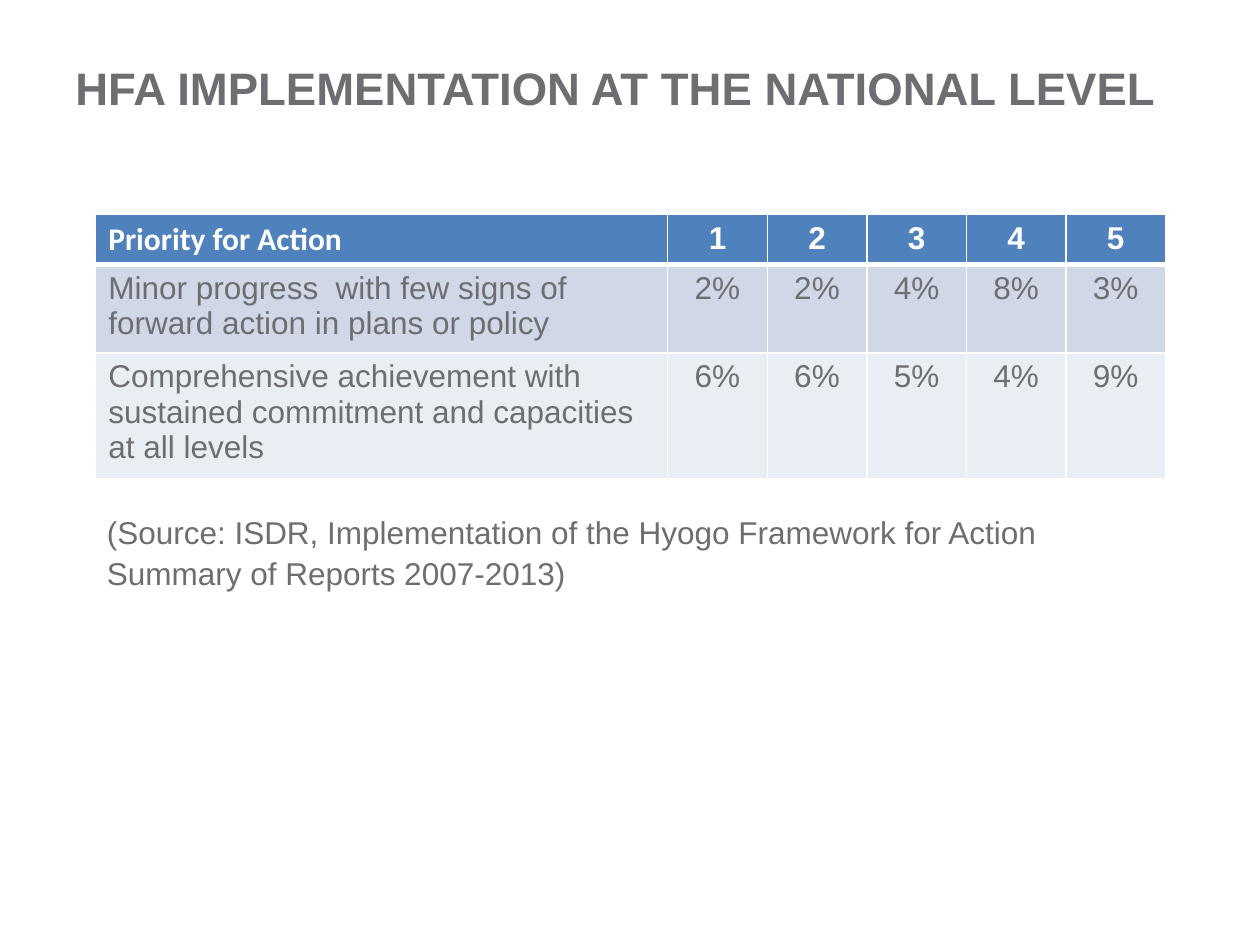
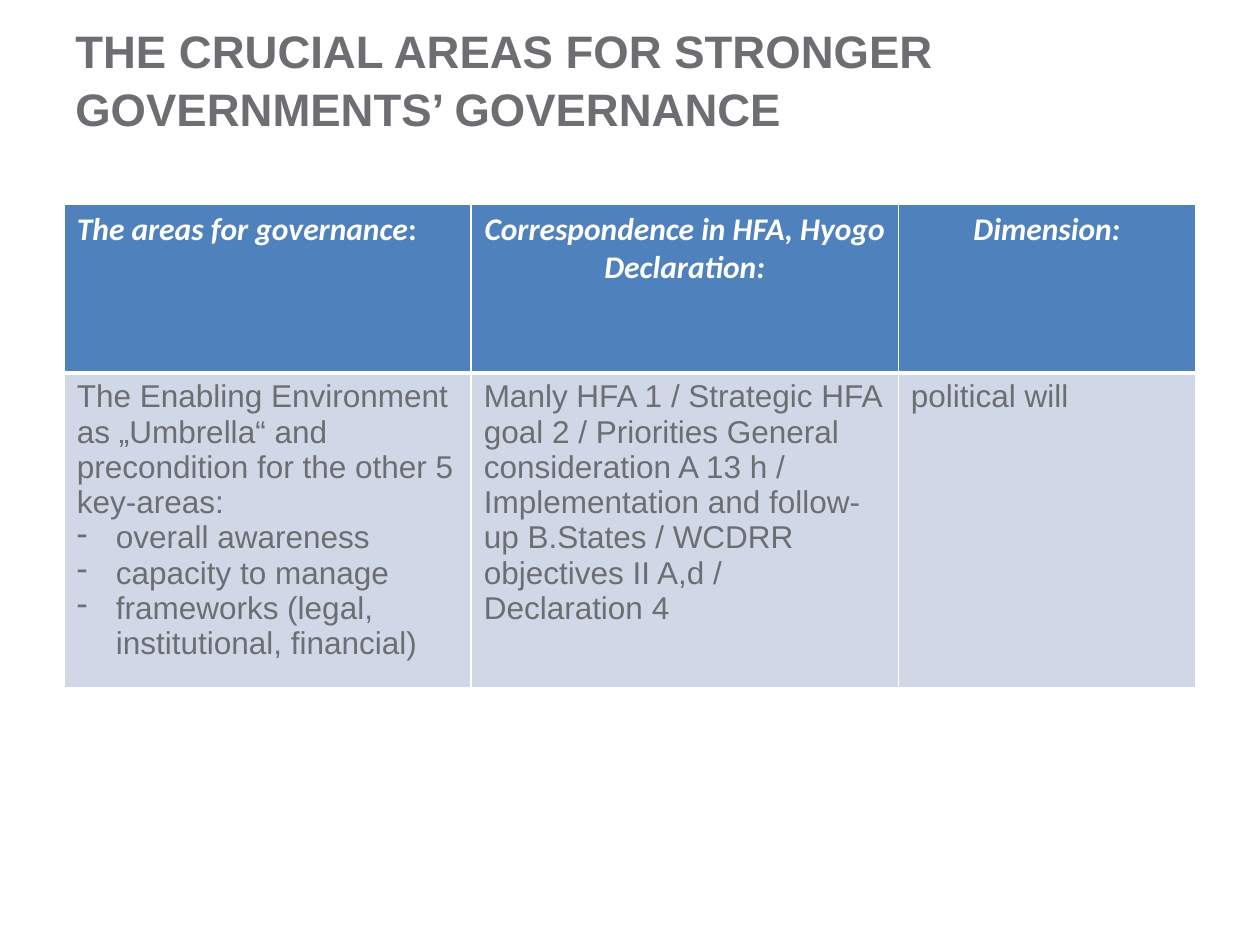
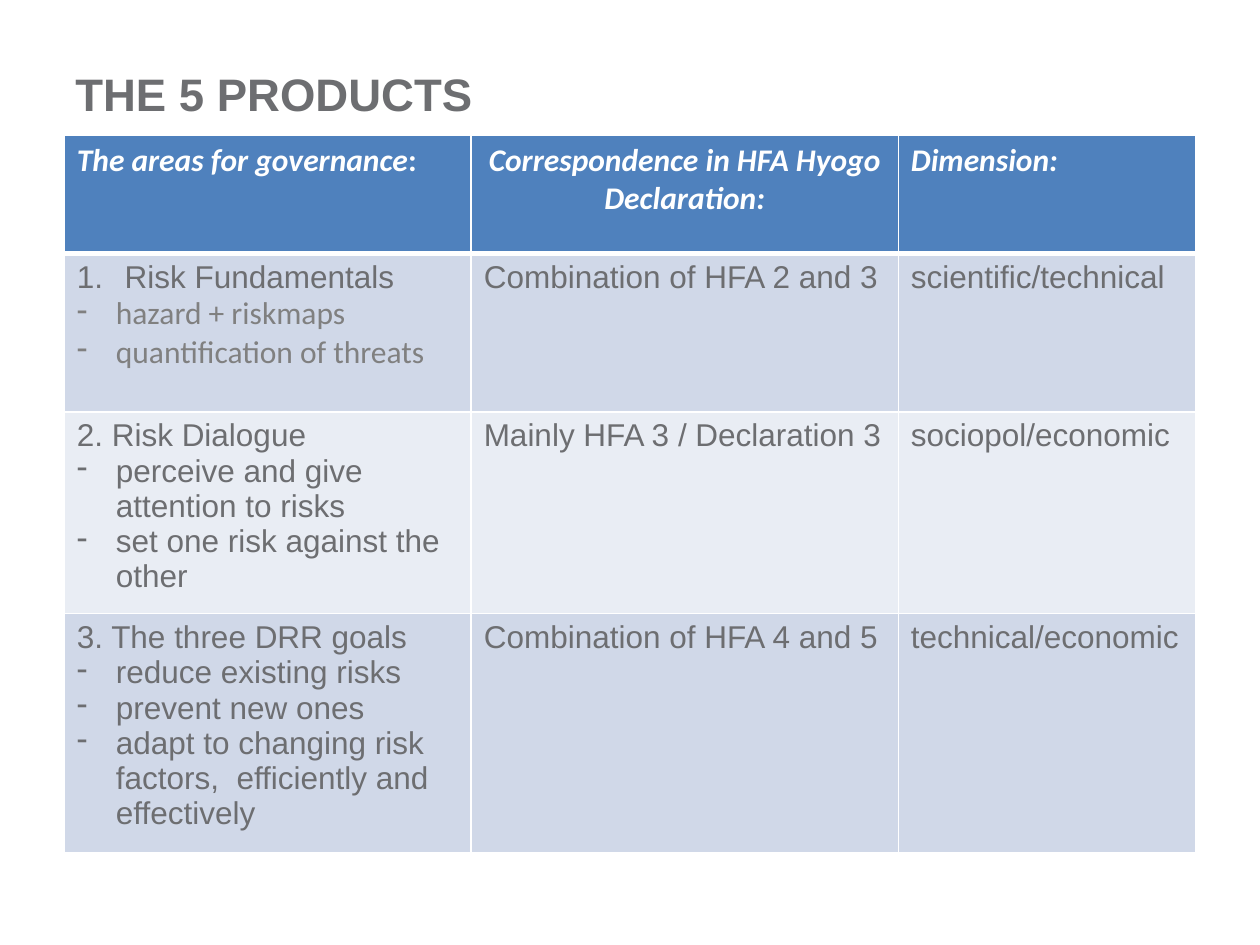
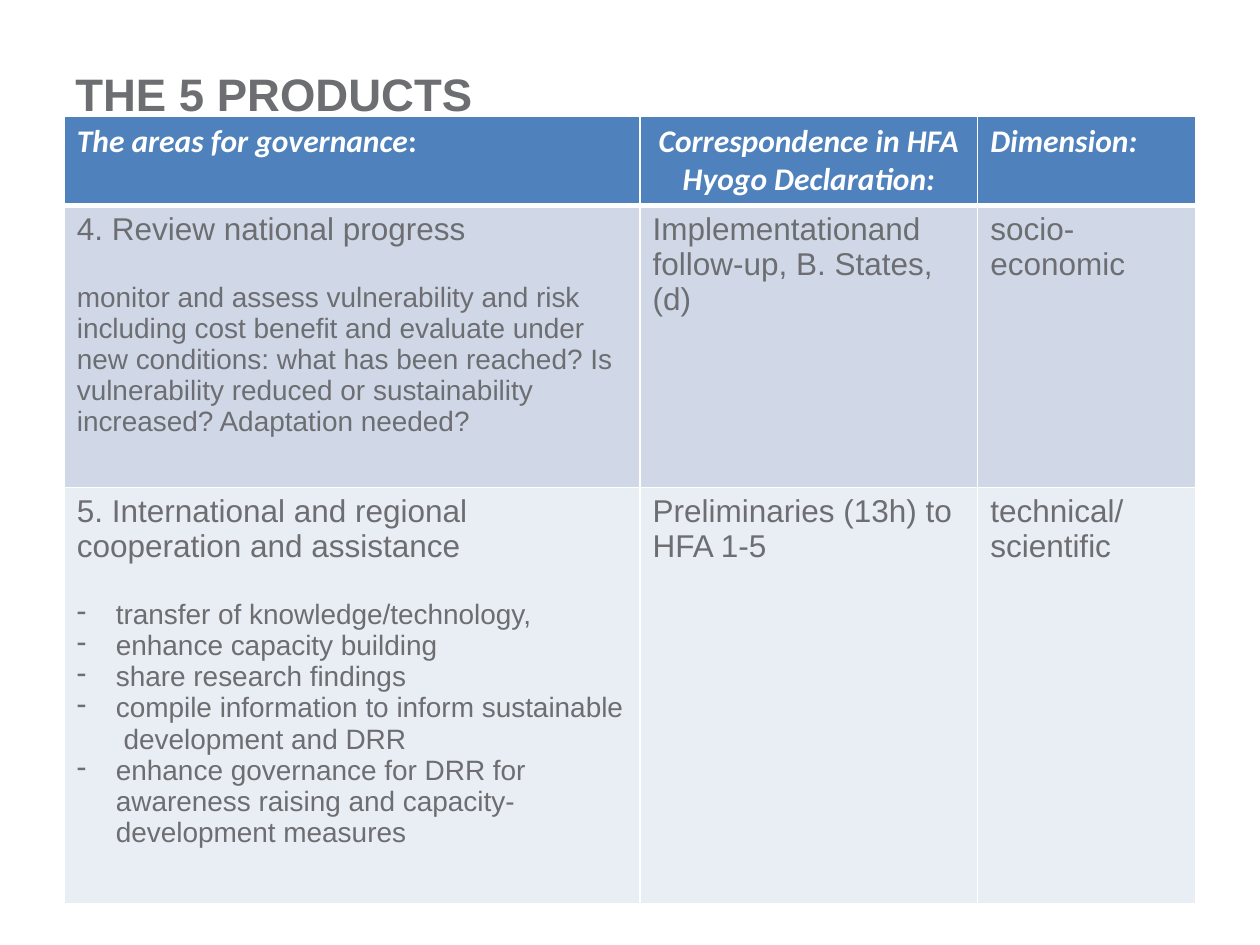
from dataclasses import dataclass, replace
from lxml.etree import SubElement
from pptx import Presentation
from pptx.dml.color import RGBColor
from pptx.enum.text import MSO_ANCHOR, PP_ALIGN
from pptx.oxml.ns import qn
from pptx.util import Inches, Pt

GRAY, WHITE, BLUE = "6D6E71", "FFFFFF", "4F81BD"
BANDS = ("D0D8E8", "E9EDF4")


@dataclass
class Para:
    """Hold one paragraph and its look."""
    text: str
    size: int = 18
    face: str = "Arial"
    tint: str = GRAY
    bold: bool = False
    slant: bool = False
    tail: str = ""
    mark: str = ""
    gap: int = 0
    mid: bool = False
    lead: float = 1.0


def color(code):
    """Turn a hex string into a colour."""
    return RGBColor.from_string(code)


def mark_up(line, mark):
    """Give a paragraph a dash or a number with a hanging indent."""
    props = line._p.get_or_add_pPr()
    dent = Inches(0.31 if mark == "-" else 0.38)
    props.set("marL", str(dent))
    props.set("indent", str(-dent))
    if mark == "-":
        SubElement(props, qn("a:buChar"), char=mark)
    else:
        SubElement(props, qn("a:buAutoNum"), type=mark)


def write(frame, paras):
    """Fill a text frame with paragraphs."""
    for num, para in enumerate(paras):
        line = frame.add_paragraph() if num else frame.paragraphs[0]
        line.text = para.text
        line.alignment = PP_ALIGN.CENTER if para.mid else PP_ALIGN.LEFT
        if para.lead != 1:
            line.line_spacing = para.lead
        if para.gap:
            line.space_before = Pt(para.gap)
        if para.mark:
            mark_up(line, para.mark)
        if para.tail:
            line.add_run().text = para.tail
        for run in line.runs:
            font = run.font
            font.name, font.size = para.face, Pt(para.size)
            font.bold, font.italic = para.bold, para.slant
            font.color.rgb = color(para.tint)
        if para.tail:
            line.runs[-1].font.italic = False


def add_text(slide, box, para, anchor=MSO_ANCHOR.TOP):
    """Place a wrapped text box."""
    frame = slide.shapes.add_textbox(*map(Inches, box)).text_frame
    frame.word_wrap = True
    frame.vertical_anchor = anchor
    write(frame, [para])


def add_title(slide, text, top, high=0.48):
    """Place the slide title."""
    para = Para(text, size=26, bold=True, lead=1.06)
    add_text(slide, (0.5, top, 9, high), para, MSO_ANCHOR.MIDDLE)


def edge(cell, top, base):
    """Draw white borders round a cell."""
    props = cell._tc.get_or_add_tcPr()
    for side, wide in zip("LRTB", (1, 1, top, base)):
        line = SubElement(props, qn("a:ln" + side), w=str(Pt(wide)))
        fill = SubElement(line, qn("a:solidFill"))
        SubElement(fill, qn("a:srgbClr"), val=WHITE)


def add_grid(slide, spot, cols, highs, rows):
    """Place a table with a blue head row and banded body rows."""
    size = sum(cols), sum(highs)
    grid = slide.shapes.add_table(len(rows), len(cols),
                                  *map(Inches, spot + size)).table
    grid.first_row = grid.horz_banding = False
    for col, wide in zip(grid.columns, cols):
        col.width = Inches(wide)
    for num, (row, high) in enumerate(zip(rows, highs)):
        grid.rows[num].height = Inches(high)
        for pos, paras in enumerate(row):
            cell = grid.cell(num, pos)
            edge(cell, 3 if num == 1 else 1, 1 if num else 3)
            cell.fill.solid()
            cell.fill.fore_color.rgb = color(BANDS[(num - 1) % 2] if num else BLUE)
            write(cell.text_frame, paras)


def plain(*texts, **look):
    """Make one-paragraph cells."""
    return [[Para(text, **look)] for text in texts]


def dash(*texts, **look):
    """Make dashed list items."""
    return [Para(text, mark="-", **look) for text in texts]


def head(match, mid=False):
    """Make the head row of the governance tables."""
    base = Para("The areas for governance", face="Calibri", tint=WHITE,
                bold=True, slant=True, tail=":")
    rest = replace(base, tail="", text=match, mid=True)
    return [[base], [rest], [replace(rest, text="Dimension:", mid=mid)]]


def show_rates(slide):
    """Build the slide on national progress."""
    add_title(slide, "HFA IMPLEMENTATION AT THE NATIONAL LEVEL", 0.44)
    look = {"tint": WHITE, "bold": True}
    rows = [
        plain("Priority for Action", face="Calibri", **look)
        + plain(*"12345", mid=True, **look),
        plain("Minor progress  with few signs of forward action in plans or policy")
        + plain("2%", "2%", "4%", "8%", "3%", mid=True),
        plain("Comprehensive achievement with sustained commitment and "
              "capacities at all levels")
        + plain("6%", "6%", "5%", "4%", "9%", mid=True),
    ]
    add_grid(slide, (0.76, 1.7), (4.54,) + (0.79,) * 5, (0.4, 0.66, 0.94), rows)
    note = ("(Source: ISDR, Implementation of the Hyogo Framework for Action\n"
            "Summary of Reports 2007-2013)")
    add_text(slide, (0.75, 4, 8.43, 0.71), Para(note, lead=1.08))


def show_areas(slide):
    """Build the slide on the enabling environment."""
    add_title(slide, "THE CRUCIAL AREAS FOR STRONGER GOVERNMENTS’ GOVERNANCE",
              0.22, 0.79)
    area = [Para("The Enabling Environment as „Umbrella“ and precondition "
                 "for the other 5 key-areas:")]
    area += dash("overall awareness", "capacity to manage",
                 "frameworks (legal, institutional, financial)")
    rows = [
        head("Correspondence in HFA, Hyogo Declaration:", mid=True),
        [area] + plain(
            "Manly HFA 1 / Strategic HFA goal 2 / Priorities General "
            "consideration A 13 h / Implementation and follow-up B.States / "
            "WCDRR objectives II A,d / Declaration 4",
            "political will"),
    ]
    add_grid(slide, (0.51, 1.62), (3.23, 3.39, 2.36), (1.34, 2.33), rows)


def show_first(slide):
    """Build the slide on products one to three."""
    add_title(slide, "THE 5 PRODUCTS", 0.49)
    risk = [Para("Risk Fundamentals", mark="arabicPeriod")]
    risk += dash("hazard + riskmaps", "quantification of threats",
                 face="Calibri", tint="808080")
    talk = [Para("2. Risk Dialogue")]
    talk += dash("perceive and give attention to risks",
                 "set one risk against the other")
    goals = [Para("3. The three DRR goals")]
    goals += dash("reduce existing risks", "prevent new ones",
                  "adapt to changing risk factors,  efficiently and effectively")
    rows = [
        head("Correspondence in HFA Hyogo Declaration:"),
        [risk] + plain("Combination of HFA 2 and 3", "scientific/technical"),
        [talk] + plain("Mainly HFA 3 / Declaration 3", "sociopol/economic"),
        [goals] + plain("Combination of HFA 4 and 5", "technical/economic"),
    ]
    add_grid(slide, (0.51, 1.07), (3.23, 3.39, 2.36),
             (0.94, 1.26, 1.5, 1.78), rows)


def show_last(slide):
    """Build the slide on products four and five."""
    add_title(slide, "THE 5 PRODUCTS", 0.49)
    check = [
        Para("4. Review national progress"),
        Para("monitor and assess vulnerability and risk including cost benefit "
             "and evaluate under new conditions: what has been reached? Is "
             "vulnerability reduced or sustainability increased? "
             "Adaptation needed?", size=16, gap=20),
    ]
    joint = [Para("5. International and regional cooperation and assistance")]
    joint += dash("transfer of knowledge/technology,", size=16, gap=20)
    joint += dash(
        "enhance capacity building", "share research findings",
        "compile information to inform sustainable  development and DRR",
        "enhance governance for DRR for awareness raising and "
        "capacity-development measures", size=16)
    rows = [
        head("Correspondence in HFA Hyogo Declaration:"),
        [check] + plain("Implementationand follow-up, B. States, (d)",
                        "socio-economic"),
        [joint] + plain("Preliminaries (13h) to HFA 1-5",
                        "technical/\nscientific"),
    ]
    add_grid(slide, (0.51, 0.92), (4.57, 2.68, 1.73), (0.71, 2.24, 3.3), rows)


def main():
    """Build and save the deck."""
    deck = Presentation()
    deck.slide_width, deck.slide_height = Inches(10), Inches(7.5)
    for show in (show_rates, show_areas, show_first, show_last):
        show(deck.slides.add_slide(deck.slide_layouts[6]))
    deck.save("out.pptx")


if __name__ == "__main__":
    main()
